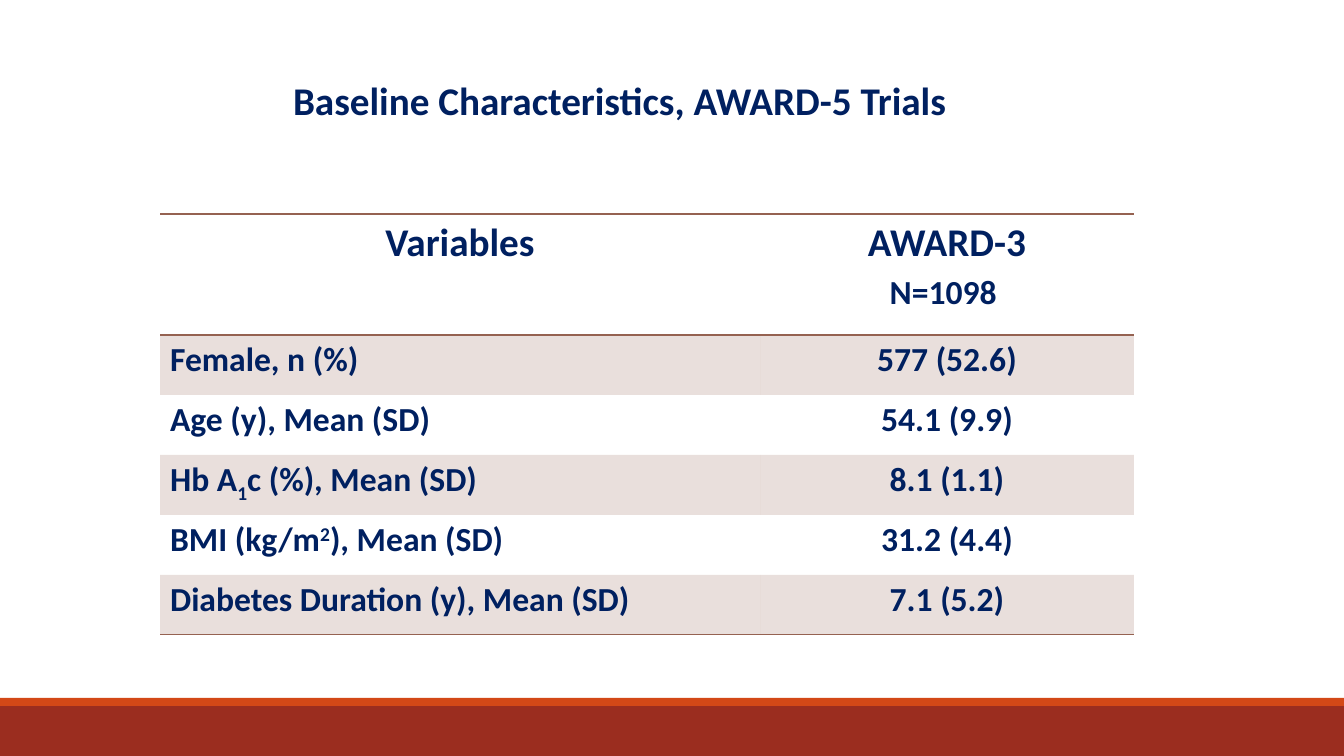
"""Build the slide of baseline characteristics with its table."""
from dataclasses import dataclass

from lxml import etree
from pptx import Presentation
from pptx import util as u
from pptx.dml.color import RGBColor
from pptx.enum import shapes, text
from pptx.oxml import ns

TITLE = "Baseline Characteristics, AWARD-5 Trials"
HEADER = ["Variables", ["AWARD-3", "N=1098 "]]
ROWS = [
    ([("Female, n (%)", 0)], "577 (52.6)"),
    ([("Age (y), Mean (SD)", 0)], "54.1 (9.9)"),
    ([("Hb A", 0), ("1", -25), ("c (%), Mean (SD)", 0)], "8.1 (1.1)"),
    ([("BMI (kg/m", 0), ("2", 30), ("), Mean (SD)", 0)], "31.2 (4.4)"),
    ([("Diabetes Duration (y), Mean (SD)", 0)], "7.1 (5.2)"),
]

PAGE_W, PAGE_H = 1344, 756
TITLE_BOX = (211, 71, 817, 57)
TABLE_LEFT, TABLE_TOP = 160, 214
COLUMNS = [600, 374]
HEADER_H, ROW_H = 121, 60
FOOTER_H, STRIPE_H = 50, 8


@dataclass(frozen=True)
class Theme:
    font: str = "Calibri"
    ink: str = "002060"
    footer: str = "9B2D1F"
    stripe: str = "D34817"
    accent: str = "956251"
    band_alpha: int = 20
    large: int = 28
    body: int = 24
    line_gap: int = 4
    rule: int = 1
    no_style: str = "{2D5ABB26-0587-4C30-8999-92F81FD0307C}"


THEME = Theme()


def px(length):
    return u.Emu(round(length * 914400 / 100.8))


def write(para, spans, size, centred=True):
    para.alignment = text.PP_ALIGN.CENTER if centred else text.PP_ALIGN.LEFT
    font = para.font
    font.name, font.size, font.bold = THEME.font, u.Pt(size), True
    font.color.rgb = RGBColor.from_string(THEME.ink)
    for words, baseline in spans:
        span = para.add_run()
        span.text = words
        if baseline:
            span._r.get_or_add_rPr().set("baseline", str(baseline * 1000))


def add_bar(page, top, height, colour):
    bar = page.shapes.add_shape(
        shapes.MSO_SHAPE.RECTANGLE, 0, px(top), px(PAGE_W), px(height))
    bar.shadow.inherit = False
    bar.fill.solid()
    bar.fill.fore_color.rgb = RGBColor.from_string(colour)
    bar.line.fill.background()


def add_rules(cell, sides):
    props = cell._tc.get_or_add_tcPr()
    for place, side in enumerate(sides):
        line = etree.Element(ns.qn(f"a:ln{side}"), w=str(u.Pt(THEME.rule)))
        fill = etree.SubElement(line, ns.qn("a:solidFill"))
        etree.SubElement(fill, ns.qn("a:srgbClr"), val=THEME.accent)
        props.insert(place, line)


def fill_band(cell):
    cell.fill.solid()
    cell.fill.fore_color.rgb = RGBColor.from_string(THEME.accent)
    colour = cell._tc.tcPr.find(".//" + ns.qn("a:srgbClr"))
    etree.SubElement(colour, ns.qn("a:alpha"), val=str(THEME.band_alpha * 1000))


def add_title(page):
    box = page.shapes.add_textbox(*map(px, TITLE_BOX))
    box.text_frame.word_wrap = True
    write(box.text_frame.paragraphs[0], [(TITLE, 0)], THEME.large)


def add_baseline_table(page):
    heights = [HEADER_H] + [ROW_H] * len(ROWS)
    table = page.shapes.add_table(
        len(heights), len(COLUMNS), px(TABLE_LEFT), px(TABLE_TOP),
        px(sum(COLUMNS)), px(sum(heights))).table
    table.first_row = table.horz_banding = False
    table._tbl.tblPr.find(ns.qn("a:tableStyleId")).text = THEME.no_style
    for column, width in zip(table.columns, COLUMNS):
        column.width = px(width)
    for row, height in zip(table.rows, heights):
        row.height = px(height)

    variables, (trial, count) = HEADER
    write(table.cell(0, 0).text_frame.paragraphs[0], [(variables, 0)], THEME.large)
    frame = table.cell(0, 1).text_frame
    write(frame.paragraphs[0], [(trial, 0)], THEME.large)
    para = frame.add_paragraph()
    para.space_before = u.Pt(THEME.line_gap)
    write(para, [(count, 0)], THEME.body)

    for number, (label, value) in enumerate(ROWS, 1):
        name_cell, value_cell = table.rows[number].cells
        write(name_cell.text_frame.paragraphs[0], label, THEME.body, centred=False)
        write(value_cell.text_frame.paragraphs[0], [(value, 0)], THEME.body)

    for number, row in enumerate(table.rows):
        for cell in row.cells:
            if number % 2:
                fill_band(cell)
            else:
                cell.fill.background()
            if number == 0:
                add_rules(cell, "TB")
            elif number == len(ROWS):
                add_rules(cell, "B")


def main():
    deck = Presentation()
    deck.slide_width, deck.slide_height = px(PAGE_W), px(PAGE_H)
    page = deck.slides.add_slide(deck.slide_layouts[6])
    footer_top = PAGE_H - FOOTER_H
    add_bar(page, footer_top, FOOTER_H, THEME.footer)
    add_bar(page, footer_top - STRIPE_H, STRIPE_H, THEME.stripe)
    add_title(page)
    add_baseline_table(page)
    deck.save("out.pptx")


if __name__ == "__main__":
    main()
